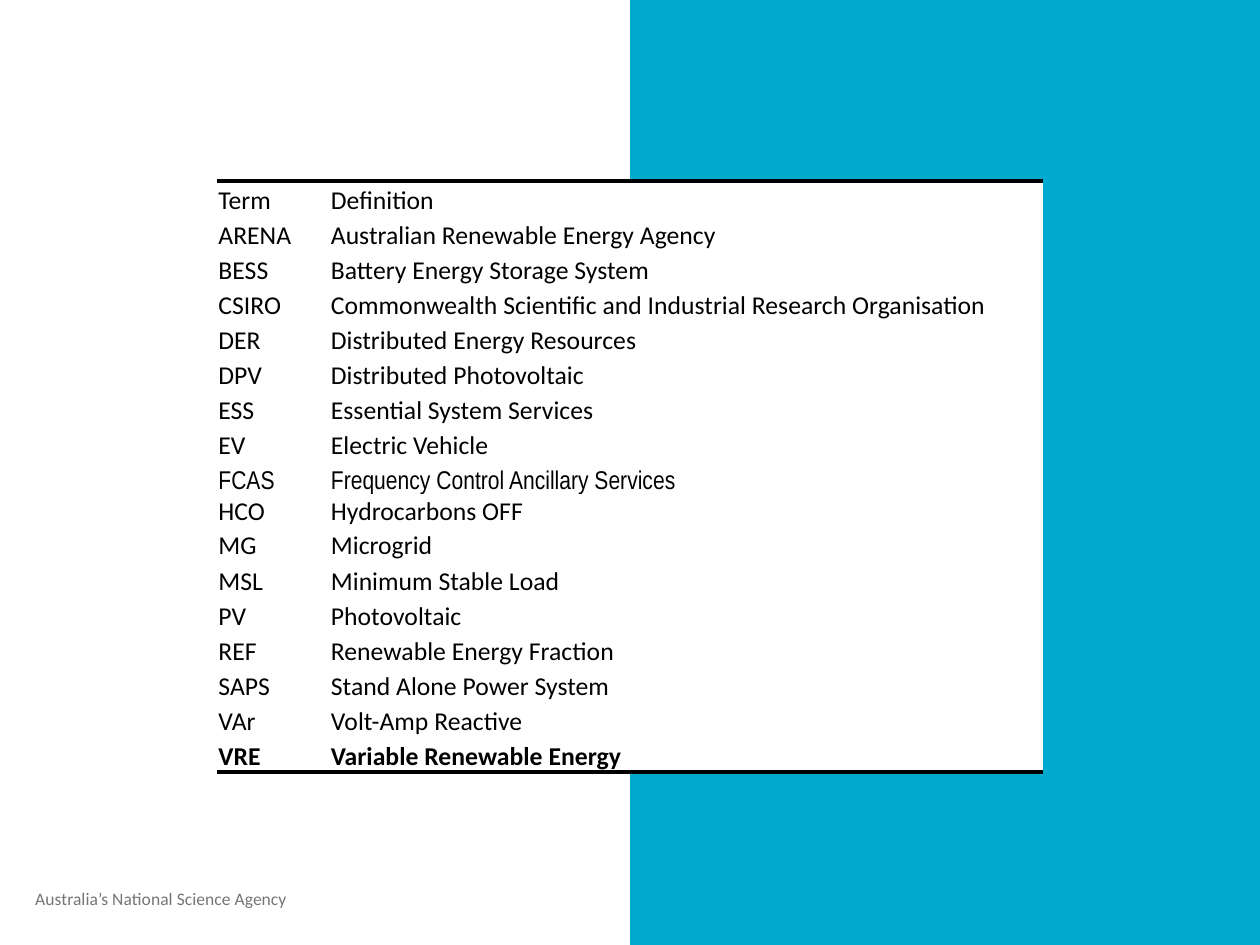
from dataclasses import dataclass

from lxml.etree import SubElement
from pptx import Presentation
from pptx.dml.color import RGBColor
from pptx.enum.shapes import MSO_SHAPE
from pptx.enum.text import MSO_ANCHOR
from pptx.oxml.ns import qn
from pptx.slide import Slide
from pptx.table import _Cell
from pptx.text.text import _Paragraph
from pptx.util import Inches, Pt


@dataclass(frozen=True)
class Theme:
    panel: str = "00A9CE"
    paper: str = "FFFFFF"
    ink: str = "000000"
    footer: str = "757579"
    font: str = "Calibri"
    narrow_font: str = "Arial Narrow"
    table_size: float = 11
    footer_size: float = 7.5
    rule_width: float = 2


THEME = Theme()
SLIDE_WIDTH = Inches(7.5)
SLIDE_HEIGHT = SLIDE_WIDTH * 3 // 4
FULL_ROW = Inches(3.13) // 15
CELL_EDGES = ("a:lnL", "a:lnR", "a:lnT", "a:lnB")


@dataclass(frozen=True)
class GlossaryRow:
    term: str
    definition: str
    font: str = THEME.font
    bold: bool = False
    height: int = FULL_ROW
    rule: str = ""


GLOSSARY = [
    GlossaryRow("Term", "Definition", rule="a:lnT"),
    GlossaryRow("ARENA", "Australian Renewable Energy Agency"),
    GlossaryRow("BESS", "Battery Energy Storage System"),
    GlossaryRow("CSIRO", "Commonwealth Scientific and Industrial Research Organisation"),
    GlossaryRow("DER", "Distributed Energy Resources"),
    GlossaryRow("DPV", "Distributed Photovoltaic"),
    GlossaryRow("ESS", "Essential System Services"),
    GlossaryRow("EV", "Electric Vehicle"),
    GlossaryRow("FCAS", "Frequency Control Ancillary Services",
                font=THEME.narrow_font, height=Inches(0.1)),
    GlossaryRow("HCO", "Hydrocarbons OFF", height=Inches(0.1)),
    GlossaryRow("MG", "Microgrid"),
    GlossaryRow("MSL", "Minimum Stable Load"),
    GlossaryRow("PV", "Photovoltaic"),
    GlossaryRow("REF", "Renewable Energy Fraction"),
    GlossaryRow("SAPS", "Stand Alone Power System"),
    GlossaryRow("VAr", "Volt-Amp Reactive"),
    GlossaryRow("VRE", "Variable Renewable Energy", bold=True, rule="a:lnB"),
]


def format_runs(paragraph: _Paragraph, font: str, size: float, color: str,
                bold: bool = False) -> None:
    for run in paragraph.runs:
        run.font.name = font
        run.font.size = Pt(size)
        run.font.bold = bold
        run.font.color.rgb = RGBColor.from_string(color)


def set_borders(cell: _Cell, ruled_edge: str) -> None:
    """Rule one edge and clear the others; borders must precede the fill."""
    properties = cell._tc.get_or_add_tcPr()
    for position, edge in enumerate(CELL_EDGES):
        line = SubElement(properties, qn(edge))
        if edge == ruled_edge:
            line.set("w", str(Pt(THEME.rule_width)))
            fill = SubElement(line, qn("a:solidFill"))
            SubElement(fill, qn("a:srgbClr"), val=THEME.ink)
        else:
            SubElement(line, qn("a:noFill"))
        properties.insert(position, line)


def fill_cell(cell: _Cell, text: str, row: GlossaryRow) -> None:
    cell.text_frame.text = text
    format_runs(cell.text_frame.paragraphs[0], row.font, THEME.table_size,
                THEME.ink, row.bold)
    cell.vertical_anchor = MSO_ANCHOR.BOTTOM
    cell.margin_left = cell.margin_right = cell.margin_top = Inches(0.01)
    cell.margin_bottom = 0
    cell.fill.solid()
    cell.fill.fore_color.rgb = RGBColor.from_string(THEME.paper)
    set_borders(cell, row.rule)


def add_glossary(slide: Slide, rows: list[GlossaryRow]) -> None:
    table = slide.shapes.add_table(
        len(rows), 2, Inches(1.29), Inches(1.08), Inches(4.92),
        sum(row.height for row in rows)).table
    table.first_row = table.horz_banding = False
    for column, width in zip(table.columns, (0.67, 4.25)):
        column.width = Inches(width)
    for index, row in enumerate(rows):
        table.rows[index].height = row.height
        for column_index, text in enumerate((row.term, row.definition)):
            fill_cell(table.cell(index, column_index), text, row)


def add_panel(slide: Slide) -> None:
    panel = slide.shapes.add_shape(
        MSO_SHAPE.RECTANGLE, SLIDE_WIDTH // 2, 0, SLIDE_WIDTH // 2, SLIDE_HEIGHT)
    panel.shadow.inherit = False
    panel.fill.solid()
    panel.fill.fore_color.rgb = RGBColor.from_string(THEME.panel)
    panel.line.fill.background()


def add_footer(slide: Slide) -> None:
    frame = slide.shapes.add_textbox(
        Inches(0.21), Inches(5.3), Inches(1.96), Inches(0.11)).text_frame
    frame.word_wrap = True
    frame.margin_left = frame.margin_right = 0
    frame.margin_top = frame.margin_bottom = 0
    frame.text = "Australia’s National Science Agency"
    paragraph = frame.paragraphs[0]
    paragraph.line_spacing = 0.9
    format_runs(paragraph, THEME.font, THEME.footer_size, THEME.footer)


def main() -> None:
    presentation = Presentation()
    presentation.slide_width = SLIDE_WIDTH
    presentation.slide_height = SLIDE_HEIGHT
    slide = presentation.slides.add_slide(presentation.slide_layouts[6])
    add_panel(slide)
    add_footer(slide)
    add_glossary(slide, GLOSSARY)
    presentation.save("out.pptx")


if __name__ == "__main__":
    main()
